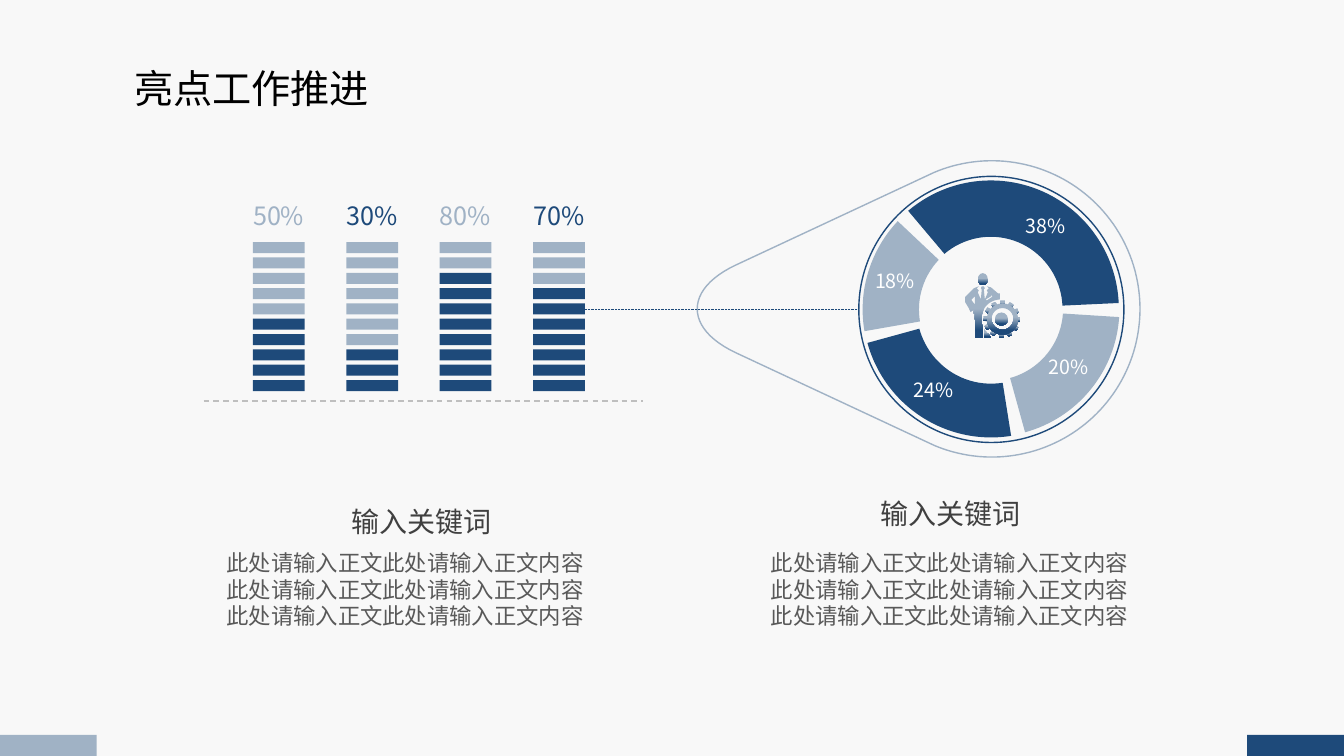
from math import cos, radians, sin

from lxml import etree
from pptx import Presentation
from pptx import util as u
from pptx.dml.color import RGBColor
from pptx.enum import dml, shapes, text
from pptx.oxml.ns import qn

# The page is a grid of square cells, 133.33 columns by 75 rows.
CELL = u.Inches(0.1)
COLUMNS, ROWS = 133.33, 75
FONT = "Noto Sans CJK SC"
NAVY, MIST = "1E4A7A", "A0B2C5"
HEADING = "输入关键词"
BODY = ["此处请输入正文此处请输入正文内容"] * 3
BARS = [(50, MIST), (30, NAVY), (80, MIST), (70, NAVY)]
RING_ARCS = [
    # rotation, start angle, end angle, thickness, colour
    (0, 229.9, 357.34, 0.22, NAVY),
    (223.4, 306.65, 359.93, 0.22, MIST),
    (170.4, 270.54, 354.21, 0.21, NAVY),
    (79.2, 284.45, 355.31, 0.22, MIST),
]
RING_LABELS = [("38%", 100, 20.7), ("20%", 102.3, 34.7),
               ("18%", 85.1, 26.1), ("24%", 88.9, 37)]
RING_CENTRE = (98.4, 30.65)
GEAR_CENTRE = (99.4, 31.65)
TORSO = [
    (99.2, 29.7), (99.2, 29.1), (99, 29.1), (98.3, 28.5), (97.9, 28.4),
    (98.1, 28.6), (97.9, 28.8), (98, 29), (97.7, 29.7), (97.6, 28.7),
    (97.7, 28.6), (97.6, 28.4), (97.4, 28.4), (97.3, 28.6), (97.4, 28.7),
    (97.3, 29.7), (97, 29), (97.1, 28.8), (96.9, 28.6), (97.1, 28.4),
    (96.6, 28.6), (95.7, 29.5), (95.7, 29.9), (96, 30.4), (96.3, 30.9),
    (96.6, 30.7), (96.6, 31.1), (96.7, 31.1), (96.8, 33.5), (97.5, 33.5),
    (97.5, 32.4),
]
ARM_GAPS = [
    [(98.3, 29.4), (98.3, 29.2), (98.4, 29.4), (98.5, 29.4), (97.9, 29.8), (97.8, 29.7)],
    [(96.7, 30.2), (96.4, 29.8), (96.4, 29.7), (96.7, 29.4)],
]


def grid(*cells):
    return [u.Emu(round(cell * CELL)) for cell in cells]


def colour(hex_code):
    return RGBColor.from_string(hex_code)


def polar(centre, radius, degrees):
    angle = radians(degrees)
    return centre[0] + radius * cos(angle), centre[1] + radius * sin(angle)


def curve(start, pull, push, end, steps=24):
    """Points along a cubic Bezier curve."""
    points = []
    for step in range(steps + 1):
        t = step / steps
        weights = ((1 - t) ** 3, 3 * t * (1 - t) ** 2, 3 * t * t * (1 - t), t ** 3)
        points.append(tuple(sum(w * p[axis] for w, p in zip(weights, (start, pull, push, end)))
                            for axis in (0, 1)))
    return points


def style(shape, fill=None, line=None, gradient=False):
    shape.shadow.inherit = False
    if gradient:
        shape.fill.gradient()
        shape.fill.gradient_angle = 270
        for stop, position, code in zip(shape.fill.gradient_stops, (0.44, 0.86), (MIST, NAVY)):
            stop.position = position
            stop.color.rgb = colour(code)
    elif fill:
        shape.fill.solid()
        shape.fill.fore_color.rgb = colour(fill)
    else:
        shape.fill.background()
    if line:
        shape.line.color.rgb = colour(line)
        shape.line.width = u.Pt(1)
    else:
        shape.line.fill.background()
    return shape


def add_preset(parent, kind, place, **look):
    return style(parent.shapes.add_shape(kind, *grid(*place)), **look)


def add_outline(parent, contours, **look):
    builder = None
    for contour in contours:
        first, *rest = [grid(*point) for point in contour]
        if builder is None:
            builder = parent.shapes.build_freeform(*first)
        else:
            builder.move_to(*first)
        builder.add_line_segments(rest, close=True)
    return style(builder.convert_to_shape(), **look)


def add_line(page, start, end, hex_code, width, dash):
    line = page.shapes.add_connector(shapes.MSO_CONNECTOR.STRAIGHT, *grid(*start, *end))
    line.line.color.rgb = colour(hex_code)
    line.line.width = u.Pt(width)
    line.line.dash_style = dash
    etree.SubElement(line._element.spPr, qn("a:effectLst"))
    return line


def write(box, lines, size, hex_code, align=text.PP_ALIGN.CENTER):
    frame = box.text_frame
    frame.word_wrap = True
    frame.auto_size = text.MSO_AUTO_SIZE.NONE
    frame.vertical_anchor = text.MSO_ANCHOR.MIDDLE
    for number, line in enumerate(lines):
        para = frame.add_paragraph() if number else frame.paragraphs[0]
        para.alignment = align
        para.line_spacing = 1.0
        para.space_before = u.Pt(0)
        span = para.add_run()
        span.text = line
        span.font.name = FONT
        span.font.size = u.Pt(size)
        span.font.bold = False
        span.font.color.rgb = colour(hex_code)
        etree.SubElement(span._r.get_or_add_rPr(), qn("a:ea"), typeface=FONT)


def add_label(page, place, label, size, hex_code):
    write(page.shapes.add_textbox(*grid(*place)), [label], size, hex_code)


def fill_placeholder(page, index, place, lines, size, hex_code, **options):
    box = page.placeholders[index]
    box.left, box.top, box.width, box.height = grid(*place)
    write(box, lines, size, hex_code, **options)
    for para in box.text_frame.paragraphs:
        properties = para._p.get_or_add_pPr()
        properties.set("marL", "0")
        properties.set("indent", "0")
        etree.SubElement(properties, qn("a:buNone"))


def add_bars(page):
    """Draw the stacked bars; return the block that the link to the ring starts from."""
    add_line(page, (20.2, 39.8), (63.8, 39.8), "BFBFBF", 1, dml.MSO_LINE.DASH)
    for number, (percent, label_colour) in enumerate(BARS):
        left = 25.1 + 9.26 * number
        blocks = [add_preset(page, shapes.MSO_SHAPE.RECTANGLE,
                             (left, 37.7 - 1.52 * level, 5.14, 1.1),
                             fill=NAVY if level < percent // 10 else MIST)
                  for level in range(10)]
        add_label(page, (left - 1.8, 19.4, 8.7, 4), f"{percent}%", 18, label_colour)
    return blocks[5]


def add_ring(page, link_start):
    add_preset(page, shapes.MSO_SHAPE.OVAL, (85.2, 17.5, 26.3, 26.4), line=NAVY)
    for rotation, start, end, thickness, fill in RING_ARCS:
        arc = add_preset(page, shapes.MSO_SHAPE.BLOCK_ARC, (85.6, 17.9, 25.4, 25.5), fill=fill)
        arc.rotation = rotation
        # An angle is stored in 60000ths of a degree, an adjustment in 100000ths.
        for index, value in enumerate((start * 0.6, end * 0.6, thickness)):
            arc.adjustments[index] = value
    round_side = [polar(RING_CENTRE, 14.7, angle) for angle in range(-113, 114, 2)]
    nose = curve((73, 35), (67.9, 32.6), (67.9, 28.7), (73, 26.3))
    add_outline(page, [round_side + nose], line=MIST)
    link = add_line(page, (58, 30.65), (85.2, 30.65), NAVY, 0.5, dml.MSO_LINE.ROUND_DOT)
    link.begin_connect(link_start, 3)
    for label, left, top in RING_LABELS:
        add_label(page, (left, top, 7.4, 3.4), label, 14, "FFFFFF")


def add_worker_icon(page):
    icon = page.shapes.add_group_shape()
    add_preset(icon, shapes.MSO_SHAPE.OVAL, (97, 27.1, 1, 1.2), gradient=True)
    waist = curve((97.5, 32.4), (97.2, 31.9), (97.2, 29.9), (99.2, 29.7))
    add_outline(icon, [TORSO + waist, *ARM_GAPS], gradient=True)
    add_outline(icon, [[(97.6, 32.6), (97.6, 33.5), (98.3, 33.5), (98.3, 33.4)]], gradient=True)
    for angle in range(2, 362, 30):
        tooth = [polar(GEAR_CENTRE, radius, angle + turn)
                 for radius, turn in ((1.86, -7), (1.86, 7), (1.38, 12), (1.38, -12))]
        add_outline(icon, [tooth], gradient=True)
    rim = add_preset(icon, shapes.MSO_SHAPE.DONUT, (97.9, 30.1, 3.1, 3.1), gradient=True)
    rim.adjustments[0] = 0.15
    add_preset(icon, shapes.MSO_SHAPE.OVAL, (98.7, 31, 1.3, 1.3), gradient=True)


def main():
    deck = Presentation()
    deck.slide_width, deck.slide_height = grid(COLUMNS, ROWS)
    page = deck.slides.add_slide(deck.slide_layouts.get_by_name("Comparison"))
    page.background.fill.solid()
    page.background.fill.fore_color.rgb = colour("F8F8F8")
    fill_placeholder(page, 0, (12.3, 5.9, 32.6, 5.7), ["亮点工作推进"], 28, "000000",
                     align=text.PP_ALIGN.JUSTIFY)
    fill_placeholder(page, 1, (31.8, 49.5, 20.1, 4.4), [HEADING], 20, "404040")
    fill_placeholder(page, 2, (19.8, 53.9, 40.8, 9.1), BODY, 16, "595959")
    fill_placeholder(page, 3, (84.9, 48.7, 18.8, 4.4), [HEADING], 20, "404040")
    fill_placeholder(page, 4, (73.8, 53.9, 40.8, 9.1), BODY, 16, "595959")
    for left, fill in ((0, MIST), (COLUMNS - 9.6, NAVY)):
        add_preset(page, shapes.MSO_SHAPE.RECTANGLE, (left, ROWS - 2.1, 9.6, 2.1), fill=fill)
    add_ring(page, add_bars(page))
    add_worker_icon(page)
    deck.save("out.pptx")


if __name__ == "__main__":
    main()
